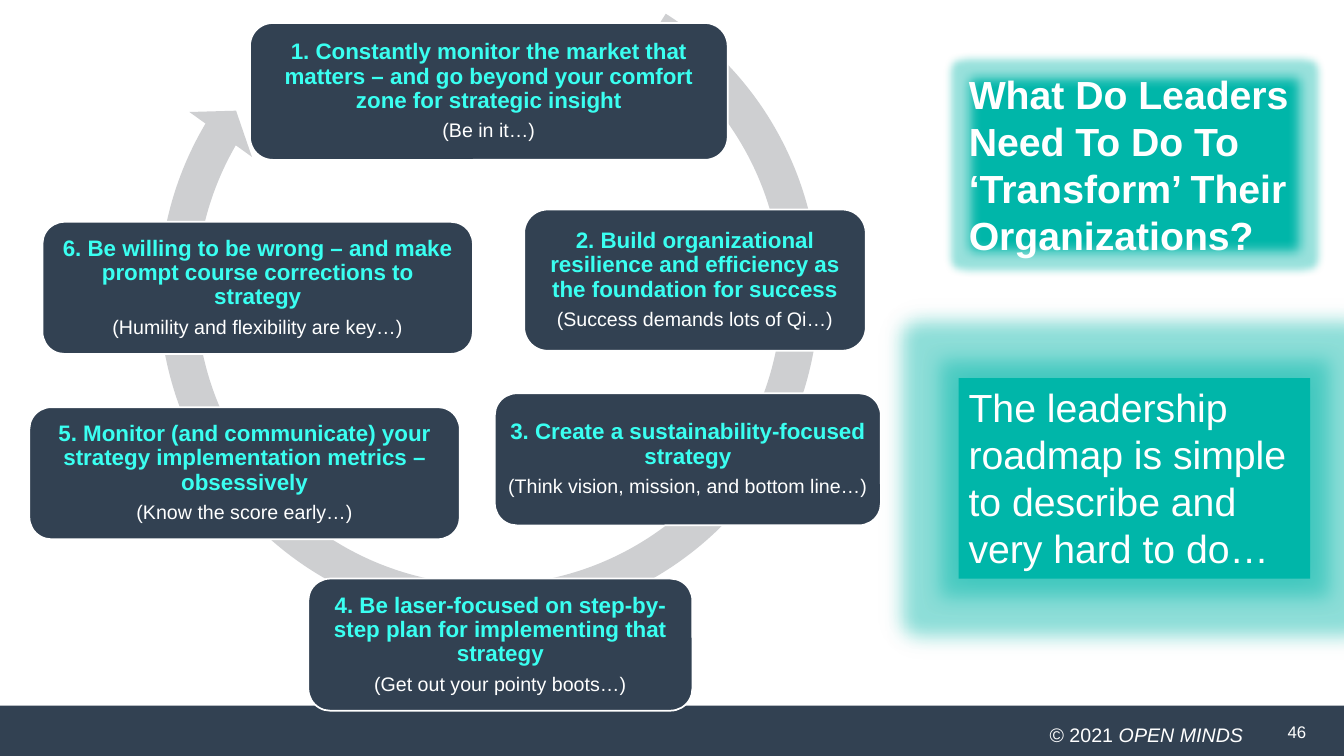
from lxml import etree
from pptx import Presentation
from pptx.dml.color import RGBColor
from pptx.enum.shapes import MSO_SHAPE as Kind
from pptx.enum.text import MSO_ANCHOR as Anchor, MSO_AUTO_SIZE as Fit, PP_ALIGN as Align
from pptx.util import Cm, Pt

NAVY, TEAL, AQUA, GREY, WHITE = "324152", "00B6A9", "3AFFF1", "CECFD1", "FFFFFF"
NS = "http://schemas.openxmlformats.org/drawingml/2006/main"
TINT = f'<a:srgbClr val="{TEAL}"><a:alpha val="40000"/></a:srgbClr>'


def style(para, size, color, bold=False, align=Align.LEFT):
    font = para.font
    font.name, font.size, font.bold = "Arial", Pt(size), bold
    font.color.rgb = RGBColor.from_string(color)
    para.alignment = align


def draw(kind, box, fill):
    """Add a flat shape; box is left, top, width, height in cm."""
    shape = slide.shapes.add_shape(kind, *map(Cm, box))
    shape.shadow.inherit = False
    shape.fill.solid()
    shape.fill.fore_color.rgb = RGBColor.from_string(fill)
    shape.line.fill.background()
    return shape


deck = Presentation()
deck.slide_width, deck.slide_height = Cm(33.87), Cm(19.05)
slide = deck.slides.add_slide(deck.slide_layouts[5])

# Footer
draw(Kind.RECTANGLE, (0, 17.78, 33.87, 1.27), NAVY)
foot = slide.shapes.add_textbox(Cm(4.45), Cm(18.08), Cm(27.13), Cm(0.81)).text_frame
foot.word_wrap = True
para = foot.paragraphs[0]
para.add_run().text = "© 2021 "
name = para.add_run()
name.text = "OPEN MINDS"
name.font.italic = True
style(para, 14, WHITE, align=Align.RIGHT)

page = slide.shapes.add_textbox(Cm(32.2), Cm(17.93), Cm(1.6), Cm(1.02)).text_frame
page.word_wrap = True
page.vertical_anchor = Anchor.MIDDLE
page.text = "46"
style(page.paragraphs[0], 12, WHITE)

# Title and message with glowing edges
title = slide.shapes.title
title.left, title.top, title.width, title.height = map(Cm, (24.16, 1.68, 8.86, 4.93))
title.fill.solid()
title.fill.fore_color.rgb = RGBColor.from_string(TEAL)
note = draw(Kind.RECTANGLE, (24.16, 9.53, 8.86, 5.05), TEAL)

panels = [
    (title, "What Do Leaders Need To Do To ‘Transform’ Their Organizations?",
     True, Anchor.MIDDLE,
     f'<a:glow rad="139700">{TINT}</a:glow><a:softEdge rad="112500"/>'),
    (note, "The leadership roadmap is simple to describe and very hard to do…",
     False, Anchor.TOP,
     f'<a:glow rad="342900">{TINT}</a:glow>'
     f'<a:outerShdw blurRad="228600" dist="0">{TINT}</a:outerShdw>'),
]
for panel, text, bold, anchor, glow in panels:
    frame = panel.text_frame
    frame.auto_size = Fit.NONE
    frame.word_wrap = True
    frame.vertical_anchor = anchor
    frame.text = text
    style(frame.paragraphs[0], 28, WHITE, bold)
    props = panel.fill._xPr
    for old in props.findall(f"{{{NS}}}effectLst"):
        props.remove(old)
    props.append(etree.fromstring(f'<a:effectLst xmlns:a="{NS}">{glow}</a:effectLst>'))

# Cycle of six steps
ring = draw(Kind.CIRCULAR_ARROW, (3.51, -1.45, 17.63, 17.63), GREY)
for i, value in enumerate((0.053, 3.126, 126.272, 181.444, 0.055)):
    ring.adjustments[i] = value

steps = [
    ((6.3, 0.58, 12.04, 3.45), "1. Constantly monitor the market that matters – "
     "and go beyond your comfort zone for strategic insight", "(Be in it…)"),
    ((13.21, 5.28, 8.61, 3.56), "2. Build organizational resilience and efficiency "
     "as the foundation for success", "(Success demands lots of Qi…)"),
    ((12.47, 9.91, 9.73, 3.33), "3. Create a sustainability-focused strategy",
     "(Think vision, mission, and bottom line…)"),
    ((7.77, 14.58, 9.68, 3.33), "4. Be laser-focused on step-by-step plan for "
     "implementing that strategy", "(Get out your pointy boots…)"),
    ((0.74, 10.26, 10.85, 3.33), "5. Monitor (and communicate) your strategy "
     "implementation metrics – obsessively", "(Know the score early…)"),
    ((1.07, 5.59, 10.85, 3.33), "6. Be willing to be wrong – and make prompt course "
     "corrections to strategy", "(Humility and flexibility are key…)"),
]
for box, head, aside in steps:
    card = draw(Kind.ROUNDED_RECTANGLE, box, NAVY)
    card.line.color.rgb = RGBColor.from_string(WHITE)
    card.line.width = Pt(1.25)
    frame = card.text_frame
    frame.word_wrap = True
    frame.vertical_anchor = Anchor.MIDDLE
    # The rounded corners already inset the text by about 0.17 cm
    frame.margin_left = frame.margin_right = Cm(0.17)
    frame.margin_top = frame.margin_bottom = Cm(0.17)
    frame.text = f"{head}\n{aside}"
    top, low = frame.paragraphs
    style(top, 16, AQUA, True, Align.CENTER)
    style(low, 14, WHITE, align=Align.CENTER)
    top.line_spacing = low.line_spacing = 0.9
    top.space_after = Pt(5.6)

deck.save("out.pptx")
